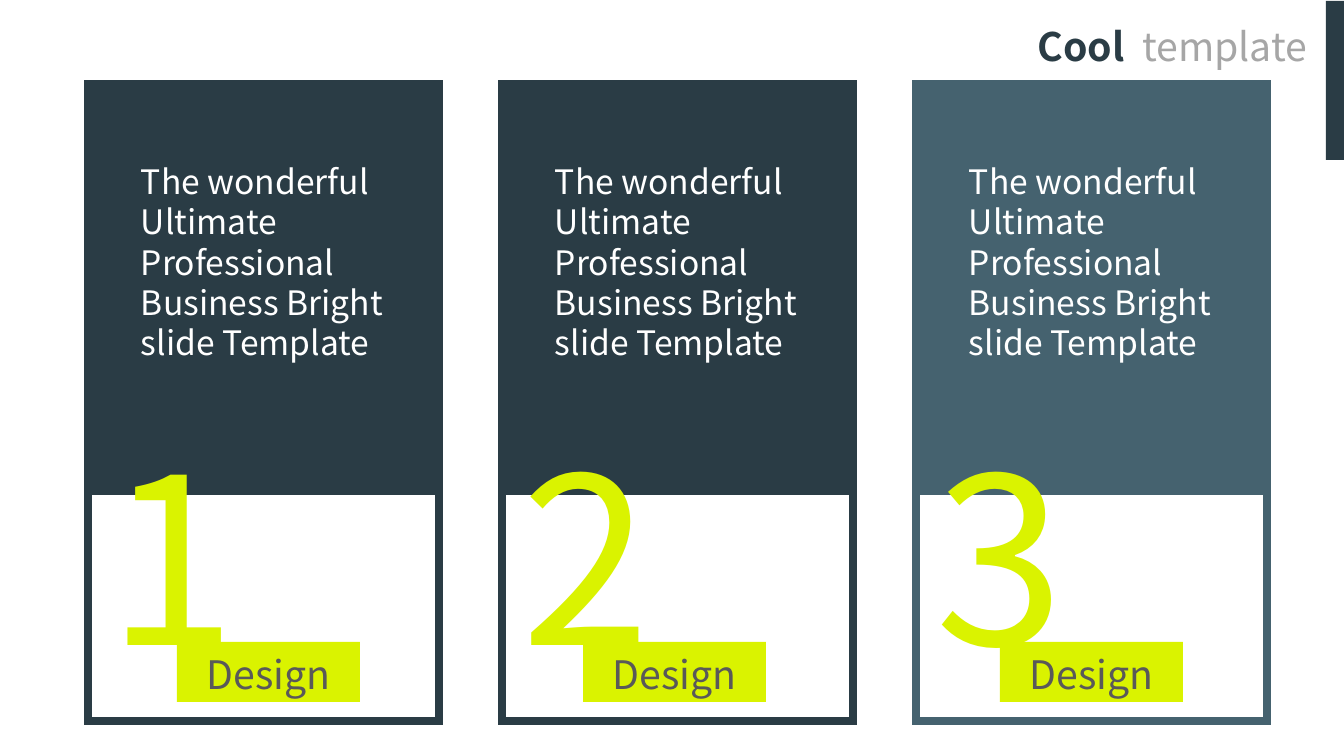
"""Build a slide with three numbered design cards."""
from lxml import etree
from pptx import Presentation
from pptx.dml.color import RGBColor
from pptx.enum.shapes import MSO_SHAPE
from pptx.enum.text import MSO_ANCHOR, MSO_AUTO_SIZE, PP_ALIGN
from pptx.oxml.ns import qn
from pptx.util import Emu, Pt

RECTANGLE = MSO_SHAPE.RECTANGLE
LEFT, CENTER, RIGHT = PP_ALIGN.LEFT, PP_ALIGN.CENTER, PP_ALIGN.RIGHT
TOP = MSO_ANCHOR.TOP
FIT_SHAPE = MSO_AUTO_SIZE.SHAPE_TO_FIT_TEXT
PX = 914400 / 100.8
FONT = "Noto Sans CJK JP"
DARK, TEAL, LIME, WHITE = "2A3C45", "45626F", "DAF300", "FFFFFF"
TAG_GRAY, TITLE_GRAY = "595959", "A6A6A6"
BODY = "The wonderful Ultimate Professional Business Bright slide Template"

presentation = Presentation()
presentation.slide_width = Emu(round(1344 * PX))
presentation.slide_height = Emu(round(756 * PX))
slide = presentation.slides.add_slide(presentation.slide_layouts[6])


def add_rectangle(left, top, width, height, fill, line=None):
    box = [Emu(round(value * PX)) for value in (left, top, width, height)]
    shape = slide.shapes.add_shape(RECTANGLE, *box)
    shape.shadow.inherit = False
    shape.fill.solid()
    shape.fill.fore_color.rgb = RGBColor.from_string(fill)
    if line:
        shape.line.color.rgb = RGBColor.from_string(line)
        shape.line.width = Pt(5.5)
        outline = shape._element.spPr.find(qn("a:ln"))
        etree.SubElement(outline, qn("a:miter"), lim="800000")
    else:
        shape.line.fill.background()
    return shape


def write_text(shape, runs, size, align=LEFT, wrap=True):
    text_frame = shape.text_frame
    text_frame.word_wrap = wrap
    text_frame.auto_size = FIT_SHAPE
    text_frame.vertical_anchor = TOP
    paragraph = text_frame.paragraphs[0]
    paragraph.alignment = align
    for text, color, bold in runs:
        run = paragraph.add_run()
        run.text = text
        run.font.name = FONT
        run.font.size = Pt(size)
        run.font.bold = bold
        run.font.color.rgb = RGBColor.from_string(color)


cards = [("1", DARK, 177), ("2", DARK, 583), ("3", TEAL, 1000)]
for index, (number, color, tag_left) in enumerate(cards):
    left = 88 + index * 414
    add_rectangle(left, 84, 351, 405, color, color)
    add_rectangle(left, 491, 351, 230, WHITE, color)

    number_box = [Emu(round(value * PX)) for value in (left + 10, 408, 166, 291)]
    write_text(slide.shapes.add_textbox(*number_box), [(number, LIME, False)], 166, wrap=False)

    tag = add_rectangle(tag_left, 642, 183, 60, LIME)
    tag.text_frame.margin_top = Emu(round(8 * PX))
    write_text(tag, [("Design", TAG_GRAY, False)], 28, CENTER)

    body_box = [Emu(round(value * PX)) for value in (left + 43, 156, 266, 254)]
    write_text(slide.shapes.add_textbox(*body_box), [(BODY, WHITE, False)], 24)

add_rectangle(1326, 1, 18, 159, DARK)
title_box = [Emu(round(value * PX)) for value in (1009, 17, 308, 57)]
title_runs = [("Cool  ", DARK, True), ("template", TITLE_GRAY, False)]
write_text(slide.shapes.add_textbox(*title_box), title_runs, 28, RIGHT, wrap=False)

presentation.save("out.pptx")
